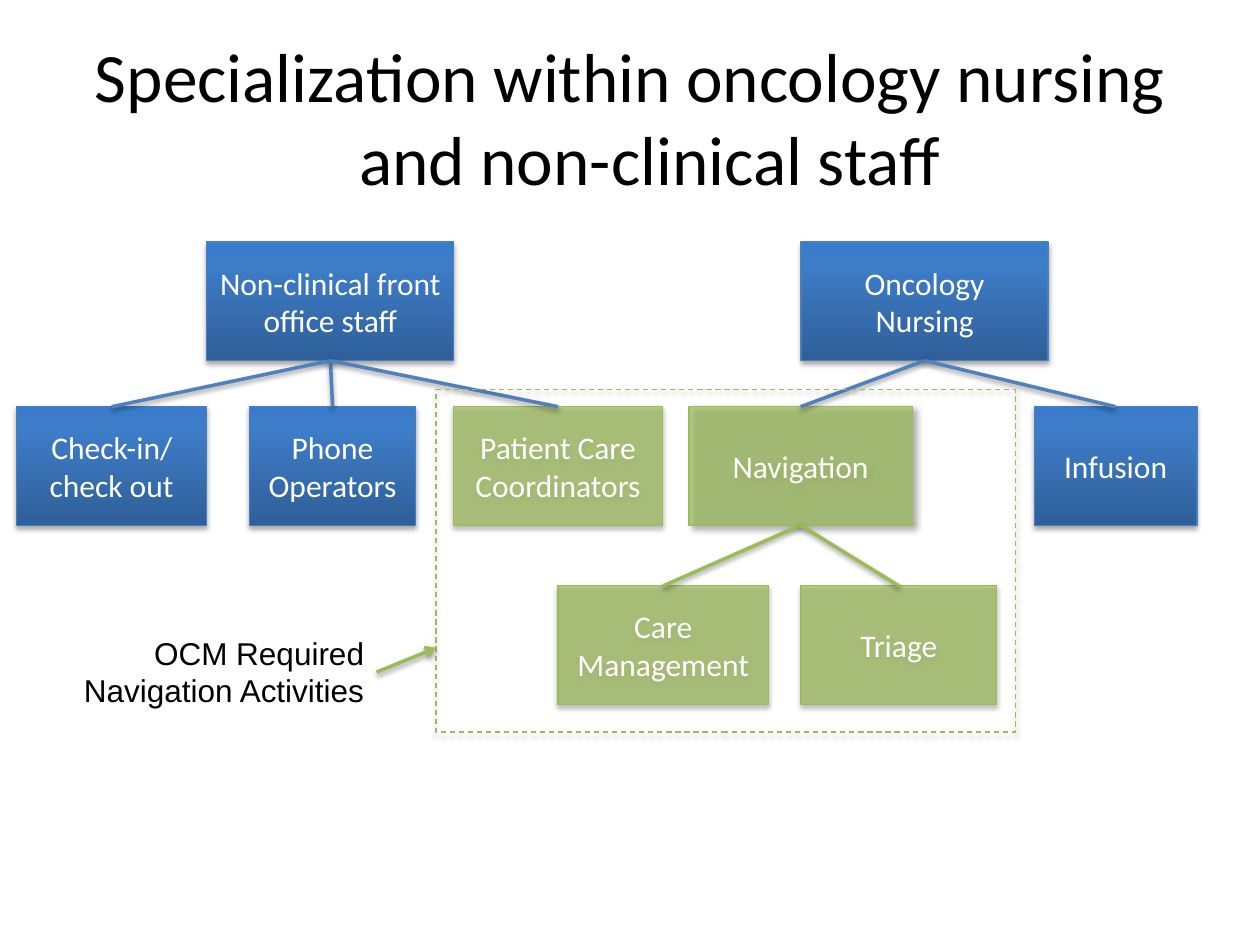
"""Build an organisation chart of specialised oncology staff."""
from dataclasses import dataclass

from lxml import etree
from pptx import Presentation
from pptx.dml.color import RGBColor
from pptx.enum import dml, shapes, text
from pptx.oxml import parse_xml
from pptx.oxml.ns import nsdecls, qn
from pptx.util import Cm, Emu, Pt


@dataclass(frozen=True)
class Theme:
    blue_stops: tuple = ((0, "2F5F99"), (80, "3D7CC7"), (100, "3A7CCB"))
    blue_edge: str = "4B7EBC"
    blue_link: str = "4F81BD"
    green: str = "9BBB59"
    green_alpha: int = 70
    dark: str = "000000"
    light: str = "FFFFFF"
    heading_font: str = "Calibri"
    label_font: str = "Arial"
    title_size: float = 39.6
    body_size: float = 18
    edge_width: float = 0.75
    link_width: float = 2


@dataclass(frozen=True)
class Shadow:
    alpha: int = 35
    blur: float = 3.1
    distance: float = 1.8
    angle: int = 90


@dataclass(frozen=True)
class Role:
    name: str
    left: float
    row: int
    width: float
    parent: str = ""
    green: bool = False
    shadow: Shadow = Shadow()


THEME = Theme()
LINK_SHADOW = Shadow(38, 3.1, 1.6)
ROW_TOPS = (4.88, 8.2, 11.81)
ROLE_HEIGHT = 2.39
NURSING = "Oncology Nursing"
OFFICE = "Non-clinical front office staff"
NAVIGATION = "Navigation"
ROLES = (
    Role(NURSING, 16.15, 0, 4.98),
    Role(NAVIGATION, 13.89, 1, 4.5, NURSING, True, Shadow(43, 4, 3, 45)),
    Role("Infusion", 20.85, 1, 3.28, NURSING),
    Role("Care Management", 11.25, 2, 4.24, NAVIGATION, True),
    Role("Triage", 16.15, 2, 3.94, NAVIGATION, True),
    Role(OFFICE, 4.17, 0, 4.98),
    Role("Check-in/check out", 0.33, 1, 3.84, OFFICE),
    Role("Phone Operators", 5.03, 1, 3.35, OFFICE),
    Role("Patient Care Coordinators", 9.14, 1, 4.22, OFFICE, True),
)


def write(box, words: str, font: str, size: float, color: str, align) -> None:
    """Put one formatted paragraph in a shape."""
    box.text_frame.word_wrap = True
    para = box.text_frame.paragraphs[0]
    para.text = words
    para.alignment = align
    para.font.name = font
    para.font.size = Pt(size)
    para.font.color.rgb = RGBColor.from_string(color)


def cast_shadow(item, shadow: Shadow) -> None:
    """Replace the inherited shadow of a shape or connector."""
    properties = item._element.spPr
    effects = properties.find(qn("a:effectLst"))
    if effects is None:
        effects = etree.SubElement(properties, qn("a:effectLst"))
    effects.append(parse_xml(
        f'<a:outerShdw {nsdecls("a")} blurRad="{Pt(shadow.blur)}" '
        f'dist="{Pt(shadow.distance)}" dir="{shadow.angle * 60000}" rotWithShape="0">'
        f'<a:srgbClr val="{THEME.dark}"><a:alpha val="{shadow.alpha * 1000}"/>'
        '</a:srgbClr></a:outerShdw>'))


def draw_edge(item, color: str, width: float) -> None:
    """Set the line colour and width of a shape or connector."""
    item.line.color.rgb = RGBColor.from_string(color)
    item.line.width = Pt(width)


def fill_green(box) -> None:
    """Fill a shape with translucent green."""
    box.fill.solid()
    box.fill.fore_color.rgb = RGBColor.from_string(THEME.green)
    color = box._element.spPr.find(qn("a:solidFill"))[0]
    etree.SubElement(color, qn("a:alpha"), val=str(THEME.green_alpha * 1000))


def fill_blue(box) -> None:
    """Fill a shape with the upward blue gradient."""
    stops = "".join(f'<a:gs pos="{place * 1000}"><a:srgbClr val="{color}"/></a:gs>'
                    for place, color in THEME.blue_stops)
    box._element.spPr.find(qn("a:prstGeom")).addnext(parse_xml(
        f'<a:gradFill {nsdecls("a")} rotWithShape="1"><a:gsLst>{stops}</a:gsLst>'
        '<a:lin ang="16200000" scaled="0"/></a:gradFill>'))


def add_rectangle(page, left: float, top: float, width: float, height: float):
    """Add a rectangle without the inherited shadow."""
    box = page.shapes.add_shape(shapes.MSO_SHAPE.RECTANGLE,
                                Cm(left), Cm(top), Cm(width), Cm(height))
    box.shadow.inherit = False
    return box


def add_role(page, role: Role):
    """Draw the box of one role."""
    box = add_rectangle(page, role.left, ROW_TOPS[role.row], role.width, ROLE_HEIGHT)
    if role.green:
        fill_green(box)
    else:
        fill_blue(box)
    draw_edge(box, THEME.green if role.green else THEME.blue_edge, THEME.edge_width)
    cast_shadow(box, role.shadow)
    box.text_frame.vertical_anchor = text.MSO_ANCHOR.MIDDLE
    write(box, role.name, THEME.heading_font, THEME.body_size, THEME.light,
          text.PP_ALIGN.CENTER)
    return box


def add_link(page, start, start_side: int, color: str, end=None, target=(0, 0)):
    """Draw a line from a box side to the top of a box or to a point."""
    link = page.shapes.add_connector(shapes.MSO_CONNECTOR.STRAIGHT, 0, 0, *target)
    link.begin_connect(start, start_side)
    if end is not None:
        link.end_connect(end, 0)
    draw_edge(link, color, THEME.link_width)
    cast_shadow(link, LINK_SHADOW)
    return link


def add_title(page) -> None:
    """Place and fill the title placeholder."""
    title = page.shapes.title
    title.left, title.top, title.width, title.height = Cm(1.27), Cm(0.76), Cm(22.86), Cm(3.18)
    title.text_frame.auto_size = text.MSO_AUTO_SIZE.NONE
    title.text_frame.vertical_anchor = text.MSO_ANCHOR.MIDDLE
    write(title, "Specialization within oncology nursing and non-clinical staff",
          THEME.heading_font, THEME.title_size, THEME.dark, text.PP_ALIGN.CENTER)
    indent = title.text_frame.paragraphs[0]._p.get_or_add_pPr()
    indent.set("marL", str(Cm(0.79)))
    indent.set("indent", str(-Cm(0.79)))


def add_required_activities(page) -> None:
    """Draw the dashed frame with its label and arrow."""
    frame = add_rectangle(page, 8.79, 7.85, 11.68, 6.91)
    frame.fill.background()
    draw_edge(frame, THEME.green, THEME.edge_width)
    frame.line.dash_style = dml.MSO_LINE.DASH
    cast_shadow(frame, Shadow())
    label = page.shapes.add_textbox(Cm(0.99), Cm(12.65), Cm(6.6), Cm(1.8))
    write(label, "OCM Required Navigation Activities", THEME.label_font,
          THEME.body_size, THEME.dark, text.PP_ALIGN.RIGHT)
    label.text_frame.auto_size = text.MSO_AUTO_SIZE.SHAPE_TO_FIT_TEXT
    arrow = add_link(page, label, 3, THEME.green, target=(frame.left, Cm(13.06)))
    etree.SubElement(arrow.line._get_or_add_ln(), qn("a:tailEnd"), type="arrow")


def main() -> None:
    """Build and save the deck."""
    deck = Presentation()
    deck.slide_width, deck.slide_height = Cm(25.4), Cm(19.05)
    page = deck.slides.add_slide(deck.slide_layouts[5])
    add_title(page)
    boxes = {role.name: add_role(page, role) for role in ROLES}
    for role in ROLES:
        if role.parent:
            color = THEME.green if role.parent == NAVIGATION else THEME.blue_link
            add_link(page, boxes[role.parent], 2, color, end=boxes[role.name])
    add_required_activities(page)
    deck.save("out.pptx")


if __name__ == "__main__":
    main()
